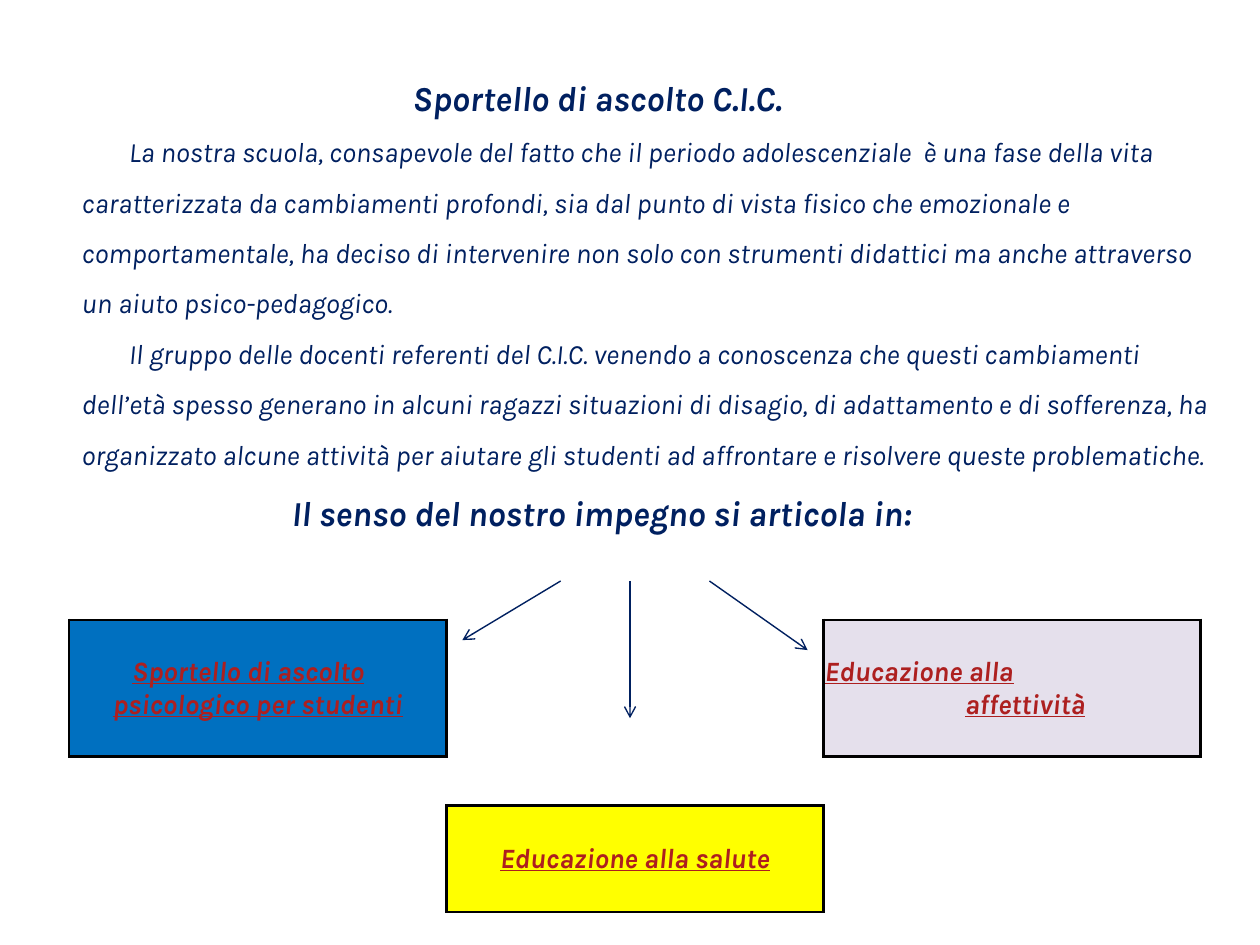
from dataclasses import dataclass

from lxml import etree
from pptx import Presentation
from pptx.dml.color import RGBColor
from pptx.enum.shapes import MSO_CONNECTOR
from pptx.enum.text import MSO_ANCHOR, PP_ALIGN
from pptx.oxml.ns import qn
from pptx.util import Pt

LEFT, CENTER = PP_ALIGN.LEFT, PP_ALIGN.CENTER
MIDDLE = MSO_ANCHOR.MIDDLE
STRAIGHT = MSO_CONNECTOR.STRAIGHT
NO_STYLE_NO_GRID = "{2D5ABB26-0587-4C30-8999-92F81FD0307C}"

COLORS = {"navy": "002060", "red": "AD1F1F", "black": "000000",
          "blue": "0070C0", "lilac": "E5E0EC", "yellow": "FFFF00"}
HEADING = {"name": "Karla", "size": Pt(20), "bold": True, "italic": True}
BODY = {"name": "Karla", "size": Pt(16), "bold": False, "italic": True}
ACTIVITY = {"name": "Karla", "size": Pt(16), "bold": True, "italic": True,
            "underline": True}
CELL_MARGINS = {"margin_left": Pt(0.7), "margin_right": Pt(0.7),
                "margin_top": Pt(0.7), "margin_bottom": Pt(0)}

ROW_HEIGHTS = [21, 19, 21, 14, 14, 21, 19, 21]
COLUMNS, COLUMN_WIDTH = 9, 71.85
BLOCK = 3  # each activity spans 3 by 3 cells


@dataclass
class Passage:
    text: str
    style: dict
    first_indent: float


@dataclass
class Line:
    text: str
    align: PP_ALIGN = CENTER
    left: float = 0
    right: float = 0


@dataclass
class Activity:
    row: int
    column: int
    fill: str
    lines: list[Line]


@dataclass
class Arrow:
    start: tuple[float, float]
    end: tuple[float, float]


PASSAGES = [
    Passage("Sportello di ascolto C.I.C.", HEADING, 189),
    Passage("La nostra scuola, consapevole del fatto che il periodo adolescenziale  è una "
            "fase della vita caratterizzata da cambiamenti profondi, sia dal punto di vista "
            "fisico che emozionale e comportamentale, ha deciso di intervenire non solo con "
            "strumenti didattici ma anche attraverso un aiuto psico-pedagogico.", BODY, 27),
    Passage("Il gruppo delle docenti referenti del C.I.C. venendo a conoscenza che questi "
            "cambiamenti dell’età spesso generano in alcuni ragazzi situazioni di disagio, "
            "di adattamento e di sofferenza, ha organizzato alcune attività per aiutare gli "
            "studenti ad affrontare e risolvere queste problematiche.", BODY, 27),
    Passage("Il senso del nostro impegno si articola in:", HEADING, 120),
]
ACTIVITIES = [
    Activity(0, 0, "blue", [Line("Sportello di ascolto", right=11),
                            Line("psicologico per studenti")]),
    Activity(0, 6, "lilac", [Line("Educazione alla", LEFT),
                             Line("affettività", left=15)]),
    Activity(5, 3, "yellow", [Line("Educazione alla salute")]),
]
ARROWS = [
    Arrow((320.4, 332), (264.2, 365.8)),
    Arrow((405.4, 332), (461.5, 371.5)),
    Arrow((360, 332), (360, 410.4)),
]


def rgb(color: str) -> RGBColor:
    return RGBColor.from_string(COLORS[color])


def add_text(paragraph, text: str, style: dict, color: str) -> None:
    run = paragraph.add_run()
    run.text = text
    for attribute, value in style.items():
        setattr(run.font, attribute, value)
    run.font.color.rgb = rgb(color)


def set_margins(paragraph, **margins: float) -> None:
    properties = paragraph._p.get_or_add_pPr()
    for attribute, points in margins.items():
        properties.set(attribute, str(Pt(points)))


def add_border(cell, side: str) -> None:
    line = etree.SubElement(cell._tc.get_or_add_tcPr(), qn(f"a:ln{side}"), w=str(Pt(1.5)))
    fill = etree.SubElement(line, qn("a:solidFill"))
    etree.SubElement(fill, qn("a:srgbClr"), val=COLORS["black"])


def add_grid(slide):
    frame = slide.shapes.add_table(len(ROW_HEIGHTS), COLUMNS, Pt(39.6), Pt(354.2),
                                   Pt(COLUMNS * COLUMN_WIDTH), Pt(sum(ROW_HEIGHTS)))
    table = frame.table
    table.first_row = table.horz_banding = False
    table._tbl.tblPr.find(qn("a:tableStyleId")).text = NO_STYLE_NO_GRID
    for column in table.columns:
        column.width = Pt(COLUMN_WIDTH)
    for row, height in zip(table.rows, ROW_HEIGHTS):
        row.height = Pt(height)
    for cell in table.iter_cells():
        for attribute, value in CELL_MARGINS.items():
            setattr(cell, attribute, value)
        # small type keeps the empty rows low
        etree.SubElement(cell.text_frame.paragraphs[0]._p, qn("a:endParaRPr"), sz="600")
    return table


def add_activity(table, activity: Activity) -> None:
    top, left, last = activity.row, activity.column, BLOCK - 1
    box = table.cell(top, left)
    box.merge(table.cell(top + last, left + last))
    for r in range(BLOCK):
        for c in range(BLOCK):
            cell = table.cell(top + r, left + c)
            origin = r == c == 0
            edges = {"L": c == 0, "R": c == last, "T": r == 0, "B": r == last}
            for side, outer in edges.items():
                if outer or origin:
                    add_border(cell, side)
            cell.fill.solid()
            cell.fill.fore_color.rgb = rgb(activity.fill)
    box.vertical_anchor = MIDDLE
    for index, line in enumerate(activity.lines):
        frame = box.text_frame
        paragraph = frame.add_paragraph() if index else frame.paragraphs[0]
        paragraph.alignment = line.align
        set_margins(paragraph, marL=line.left, marR=line.right)
        add_text(paragraph, line.text, ACTIVITY, "red")


def add_passages(slide) -> None:
    frame = slide.shapes.add_textbox(Pt(39.6), Pt(28), Pt(658), Pt(312.5)).text_frame
    frame.word_wrap = True
    for index, passage in enumerate(PASSAGES):
        paragraph = frame.add_paragraph() if index else frame.paragraphs[0]
        paragraph.line_spacing = 1.5
        set_margins(paragraph, marL=0, indent=passage.first_indent)
        add_text(paragraph, passage.text, passage.style, "navy")


def add_arrow(slide, arrow: Arrow) -> None:
    points = [Pt(value) for value in (*arrow.start, *arrow.end)]
    connector = slide.shapes.add_connector(STRAIGHT, *points)
    connector.line.color.rgb = rgb("navy")
    connector.line.width = Pt(0.79)
    etree.SubElement(connector.line._get_or_add_ln(), qn("a:tailEnd"), type="arrow")
    etree.SubElement(connector._element.spPr, qn("a:effectLst"))


def main() -> None:
    presentation = Presentation()
    presentation.slide_width, presentation.slide_height = Pt(720), Pt(540)
    slide = presentation.slides.add_slide(presentation.slide_layouts[6])

    # Three activities in one grid
    grid = add_grid(slide)
    for activity in ACTIVITIES:
        add_activity(grid, activity)

    # Introduction and the arrows down to the activities
    add_passages(slide)
    for arrow in ARROWS:
        add_arrow(slide, arrow)

    presentation.save("out.pptx")


if __name__ == "__main__":
    main()
